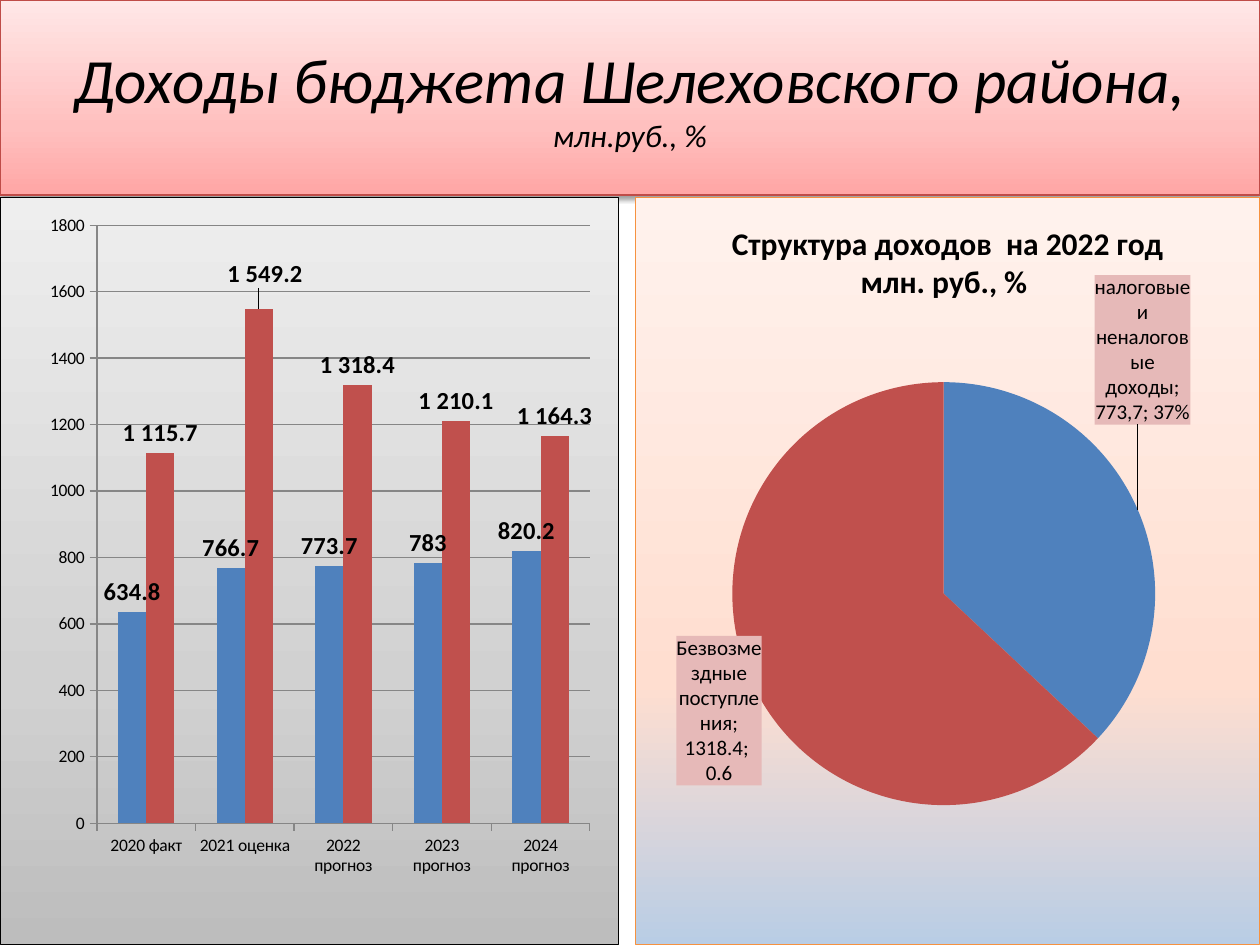
from lxml import etree
from pptx import Presentation
from pptx.chart.data import CategoryChartData
from pptx.dml.color import RGBColor
from pptx.enum.chart import XL_CHART_TYPE as ChartType
from pptx.enum.chart import XL_LABEL_POSITION as LabelPosition
from pptx.enum.chart import XL_TICK_MARK as TickMark
from pptx.enum.text import MSO_ANCHOR as Anchor
from pptx.enum.text import PP_ALIGN as Align
from pptx.oxml import parse_xml
from pptx.oxml.ns import nsdecls, qn
from pptx.util import Pt

EMU_PER_PX = 914400 / 126
FONT = "Calibri"
BLUE, RED, GRAY, PINK = "4F81BD", "C0504D", "868686", "E6B9B8"
THOUSANDS = r"#\ ##0.0"


def px(length):
    """Turn pixels into EMU."""
    return round(length * EMU_PER_PX)


def rgb(color):
    """Turn a hex string into a colour."""
    return RGBColor.from_string(color)


def style_font(font, size, color="000000", bold=False, italic=False):
    """Set the look of a font."""
    font.name, font.size, font.bold, font.italic = FONT, Pt(size), bold, italic
    font.color.rgb = rgb(color)


def add_text(paragraph, text, size, **look):
    """Add a formatted run to a paragraph."""
    run = paragraph.add_run()
    run.text = text
    style_font(run.font, size, **look)


def paint(properties, colors, border):
    """Give shape properties an upward gradient and a thin border."""
    stops = "".join(
        f'<a:gs pos="{position}000"><a:srgbClr val="{color}"/></a:gs>'
        for position, color in zip((0, 35, 100), colors))
    properties.append(parse_xml(
        f'<a:gradFill {nsdecls("a")} rotWithShape="1"><a:gsLst>{stops}</a:gsLst>'
        '<a:lin ang="16200000" scaled="0"/></a:gradFill>'))
    properties.append(parse_xml(
        f'<a:ln {nsdecls("a")} w="9525"><a:solidFill><a:srgbClr val="{border}"/>'
        '</a:solidFill></a:ln>'))


def manual_layout(x, y, size=None):
    """Build a chart layout: an offset, or an inner plot area with a size."""
    values = [("x", x), ("y", y)]
    if size:
        values = [("layoutTarget", "inner"), ("xMode", "edge"), ("yMode", "edge"),
                  *values, ("w", size[0]), ("h", size[1])]
    items = "".join(f'<c:{name} val="{value}"/>' for name, value in values)
    return parse_xml(
        f'<c:layout {nsdecls("c")}><c:manualLayout>{items}</c:manualLayout></c:layout>')


def add_title(slide):
    """Fill the title banner."""
    title = slide.shapes.title
    title.left, title.top, title.width, title.height = 0, 0, px(1260), px(195)
    paint(title._element.spPr, ("FFA6A5", "FFC0BF", "FFE7E7"), "BF4C48")
    title.shadow.inherit = False
    title._element.spPr.find(qn("a:effectLst")).append(parse_xml(
        f'<a:outerShdw {nsdecls("a")} blurRad="40000" dist="20000" dir="5400000" '
        'rotWithShape="0"><a:srgbClr val="000000"><a:alpha val="38000"/></a:srgbClr>'
        '</a:outerShdw>'))
    frame = title.text_frame
    frame.word_wrap, frame.vertical_anchor = True, Anchor.MIDDLE
    paragraph = frame.paragraphs[0]
    paragraph.alignment = Align.CENTER
    add_text(paragraph, "Доходы бюджета Шелеховского района,", 36, italic=True)
    paragraph.add_line_break()
    add_text(paragraph, "млн.руб., %", 18, italic=True)


def add_chart(slide, kind, left, width, categories, series, colors, border, plot_area):
    """Add a chart on a gradient panel below the banner."""
    data = CategoryChartData()
    data.categories = categories
    for name, values in series:
        data.add_series(name, values)
    chart = slide.shapes.add_chart(
        kind, px(left), px(197), px(width), px(748), data).chart
    style_font(chart.font, 10)
    chart.has_legend = chart.has_title = False
    properties = parse_xml(f'<c:spPr {nsdecls("c", "a")}/>')
    paint(properties, colors, border)
    space = chart._chartSpace
    space.find(qn("c:chart")).addnext(properties)
    area = space.find(".//" + qn("c:plotArea"))
    for layout in area.findall(qn("c:layout")):
        area.remove(layout)
    x, y, *size = plot_area
    area.insert(0, manual_layout(x, y, size))
    return chart


def show_labels(series, size, bold=False, number_format="General"):
    """Show the values of a series outside its points."""
    labels = series.data_labels
    labels.show_value = True
    labels.number_format, labels.number_format_is_linked = number_format, False
    labels.position = LabelPosition.OUTSIDE_END
    style_font(labels.font, size, bold=bold)
    return labels


def move_label(series, index, x, y, size, bold=False, text=None, fill=None, full=False):
    """Shift one point's label and give it its own format."""
    label = series.points[index].data_label
    if text:
        add_text(label.text_frame.paragraphs[0], text, size, bold=bold)
    else:
        style_font(label.font, size, bold=bold)
    label.position = LabelPosition.OUTSIDE_END
    element = series._element.xpath(f'c:dLbls/c:dLbl[c:idx/@val="{index}"]')[0]
    element.insert(1, manual_layout(x, y))
    anchor = element.xpath("c:txPr|c:dLblPos")[0]
    anchor.addprevious(parse_xml(
        f'<c:numFmt {nsdecls("c")} formatCode="{THOUSANDS}" sourceLinked="0"/>'))
    if fill:
        anchor.addprevious(parse_xml(
            f'<c:spPr {nsdecls("c", "a")}><a:solidFill><a:srgbClr val="{fill}"/>'
            '</a:solidFill></c:spPr>'))
    if full:
        for name in ("showCatName", "showPercent"):
            element.find(qn("c:" + name)).set("val", "1")
        etree.SubElement(element, qn("c:separator")).text = "; "


def add_income_columns(slide):
    """Add the column chart of income by year."""
    chart = add_chart(
        slide, ChartType.COLUMN_CLUSTERED, 0, 619,
        ("2020 факт", "2021 оценка", "2022 прогноз", "2023 прогноз", "2024 прогноз"),
        (("Series 1", (634.8, 766.7, 773.7, 783, 820.2)),
         ("Series 2", (1115.7, 1549.2, 1318.4, 1210.1, 1164.3))),
        ("BDBDBD", "D1D1D1", "EEEEEE"), "000000", (0.156, 0.037, 0.798, 0.801))
    plot = chart.plots[0]
    plot.gap_width, plot.overlap, plot.vary_by_categories = 150, 0, False
    for series, color, code in zip(plot.series, (BLUE, RED), ("General", THOUSANDS)):
        series.format.fill.solid()
        series.format.fill.fore_color.rgb = rgb(color)
        show_labels(series, 14, bold=True, number_format=code)
    move_label(plot.series[1], 1, 0.01, -0.02, 14, bold=True)
    value_axis = chart.value_axis
    value_axis.minimum_scale, value_axis.maximum_scale = 0, 1800
    value_axis.major_unit = 200
    value_axis.has_major_gridlines = True
    for axis in (chart.category_axis, value_axis):
        axis.major_tick_mark = TickMark.OUTSIDE
        style_font(axis.tick_labels.font, 10)
    for part in (chart.category_axis, value_axis, value_axis.major_gridlines):
        part.format.line.color.rgb = rgb(GRAY)
        part.format.line.width = Pt(0.75)


def add_structure_pie(slide):
    """Add the pie chart of the income structure."""
    chart = add_chart(
        slide, ChartType.PIE, 635, 625,
        ("налоговые и неналоговые доходы", "Безвозмездные поступления"),
        (("Series 1", (773.7, 1318.4)),),
        ("B9CDE5", "FFDED0", "FFF2ED"), "F69240", (0.155, 0.236, 0.678, 0.589))
    chart.has_title = True
    frame = chart.chart_title.text_frame
    add_text(frame.paragraphs[0], "Структура доходов  на 2022 год", 18, bold=True)
    add_text(frame.add_paragraph(), "млн. руб., % ", 18, bold=True)
    series = chart.plots[0].series[0]
    for index, color in enumerate((BLUE, RED)):
        fill = series.points[index].format.fill
        fill.solid()
        fill.fore_color.rgb = rgb(color)
    labels = show_labels(series, 12, number_format=THOUSANDS)
    labels.show_category_name = labels.show_percentage = True
    move_label(series, 0, -0.08, -0.11, 12, fill=PINK, full=True,
               text="налоговые и неналоговые доходы; 773,7; 37%")
    move_label(series, 1, 0.03, -0.06, 12, fill=PINK, full=True)


def main():
    """Build and save the slide."""
    presentation = Presentation()
    presentation.slide_width, presentation.slide_height = px(1260), px(945)
    slide = presentation.slides.add_slide(presentation.slide_layouts[5])
    add_title(slide)
    add_income_columns(slide)
    add_structure_pie(slide)
    presentation.save("out.pptx")


if __name__ == "__main__":
    main()
